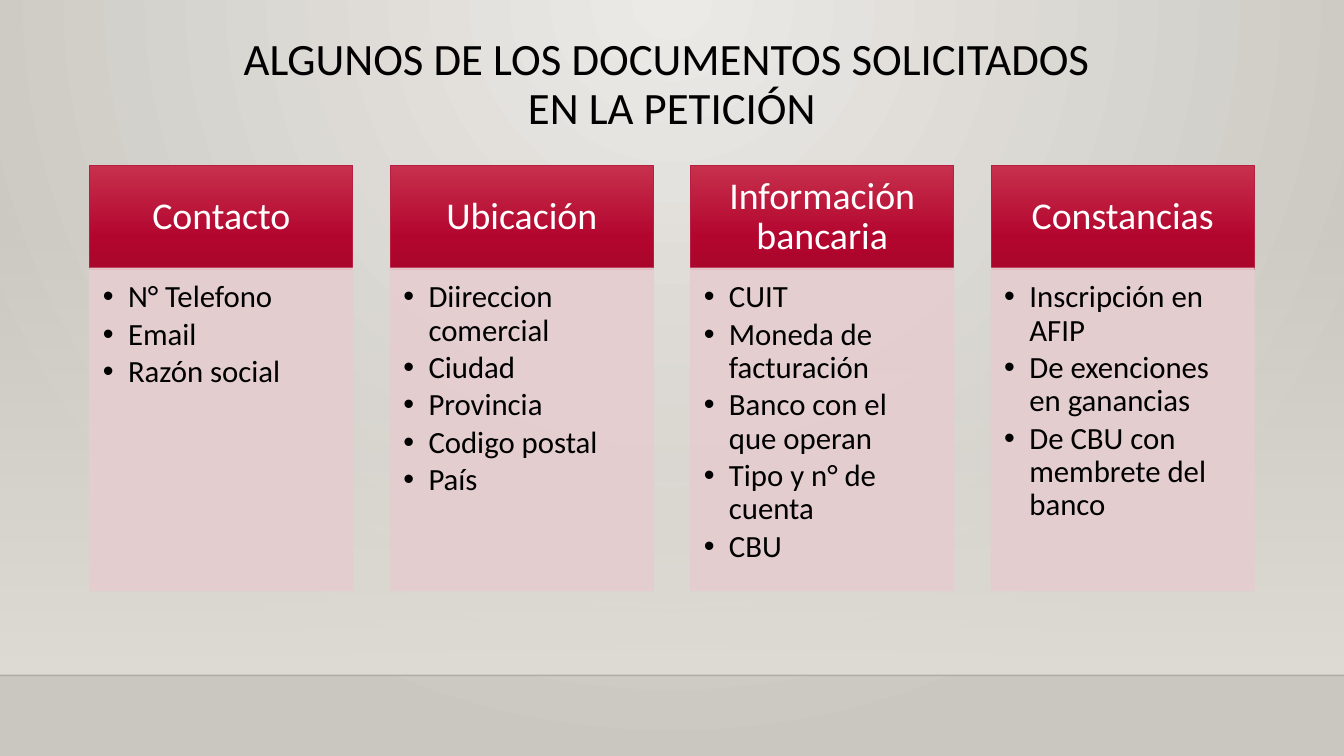
from dataclasses import dataclass

from lxml import etree
from pptx import Presentation
from pptx.dml.color import RGBColor
from pptx.enum.shapes import MSO_CONNECTOR, MSO_SHAPE
from pptx.enum.text import MSO_ANCHOR, PP_ALIGN
from pptx.oxml.ns import qn
from pptx.util import Inches, Pt

RECT = MSO_SHAPE.RECTANGLE
LINE = MSO_CONNECTOR.STRAIGHT
TOP, MIDDLE = MSO_ANCHOR.TOP, MSO_ANCHOR.MIDDLE
LEFT, CENTER = PP_ALIGN.LEFT, PP_ALIGN.CENTER

FONT = "Calibri"
WIDE, HIGH = 13.33, 7.5
COLORS = {
    "light": "ECEAE7", "stone": "CAC7C1", "wall": "DFDBD5", "edge": "000001",
    "rose": "C7304C", "red": "B3062F", "dark": "AA062C", "rim": "B71E42",
    "pink": "E6CDCF", "white": "FFFFFF", "black": "000000",
}


@dataclass
class Card:
    head: str
    items: list[str]


CARDS = [
    Card("Contacto", ["N° Telefono", "Email", "Razón social"]),
    Card("Ubicación", ["Diireccion comercial", "Ciudad", "Provincia",
                       "Codigo postal", "País"]),
    Card("Información bancaria", ["CUIT", "Moneda de facturación",
                                  "Banco con el que operan",
                                  "Tipo y n° de cuenta", "CBU"]),
    Card("Constancias", ["Inscripción en AFIP", "De exenciones en ganancias",
                         "De CBU con membrete del banco"]),
]
CARD_LEFT, CARD_STEP, CARD_WIDE = 0.89, 2.98, 2.61
HEAD_TOP, HEAD_HIGH = 1.64, 1.03
BODY_TOP, BODY_HIGH = 2.66, 3.2


def color(name: str) -> RGBColor:
    return RGBColor.from_string(COLORS[name])


def add(node, tag: str, **attrs):
    """Append a drawing element to a node."""
    return etree.SubElement(node, qn(tag), {k: str(v) for k, v in attrs.items()})


def fade(node, share: int) -> None:
    """Set the opacity, in percent, of the solid colour in a node."""
    add(node.find(f".//{qn('a:srgbClr')}"), "a:alpha", val=share * 1000)


def blend(node, stops: list[tuple[int, str, int]], radial: bool = False) -> None:
    """Turn the first solid fill in a node into a gradient."""
    solid = node.find(f".//{qn('a:solidFill')}")
    grad = etree.Element(qn("a:gradFill"), rotWithShape="1")
    row = add(grad, "a:gsLst")
    for place, name, share in stops:
        stop = add(row, "a:gs", pos=place * 1000)
        tone = add(stop, "a:srgbClr", val=COLORS[name])
        if share < 100:
            add(tone, "a:alpha", val=share * 1000)
    if radial:
        path = add(grad, "a:path", path="circle")
        add(path, "a:fillToRect", l=43000, t=0, r=43000, b=100000)
    else:
        add(grad, "a:lin", ang=5400000, scaled=0)
    solid.getparent().replace(solid, grad)


def box(slide, x: float, y: float, w: float, h: float, fill: str,
        line: str | None = None):
    shape = slide.shapes.add_shape(RECT, Inches(x), Inches(y), Inches(w), Inches(h))
    shape.shadow.inherit = False
    shape.fill.solid()
    shape.fill.fore_color.rgb = color(fill)
    if line:
        shape.line.color.rgb = color(line)
        shape.line.width = Pt(0.75)
    else:
        shape.line.fill.background()
    return shape


def write(shape, lines: list[str], *, size: float, tone: str = "black",
          align=CENTER, anchor=TOP, pads=(0.1, 0.05, 0.1, 0.05),
          after: float = 0, dots: bool = False) -> None:
    frame = shape.text_frame
    frame.word_wrap = True
    frame.vertical_anchor = anchor
    (frame.margin_left, frame.margin_top,
     frame.margin_right, frame.margin_bottom) = map(Inches, pads)
    for i, text in enumerate(lines):
        para = frame.paragraphs[0] if i == 0 else frame.add_paragraph()
        para.alignment = align
        para.line_spacing = 0.9
        para.space_after = Pt(after)
        if dots:
            para.level = 1
            props = para._p.get_or_add_pPr()
            props.set("marL", str(Inches(0.25)))
            props.set("indent", str(Inches(-0.25)))
            add(props, "a:buFont", typeface="Arial")
            add(props, "a:buChar", char="•")
        run = para.add_run()
        run.text = text
        run.font.name = FONT
        run.font.size = Pt(size)
        run.font.color.rgb = color(tone)


def scene(slide) -> None:
    # Backdrop
    slide.background.fill.solid()
    slide.background.fill.fore_color.rgb = color("stone")
    blend(slide.element, [(0, "light", 100), (100, "stone", 100)], radial=True)
    # Wall and floor edge
    wall = box(slide, 0, 2.21, WIDE, 4.49, "wall")
    blend(wall.element.spPr, [(0, "wall", 0), (100, "wall", 100)])
    edge = slide.shapes.add_connector(
        LINE, Inches(0), Inches(6.7), Inches(WIDE), Inches(6.7))
    edge.line.color.rgb = color("edge")
    edge.line.width = Pt(1)
    props = edge.element.spPr
    fade(props, 20)
    add(props, "a:effectLst")


def draw(slide, card: Card, x: float) -> None:
    # Header
    head = box(slide, x, HEAD_TOP, CARD_WIDE, HEAD_HIGH, "red", "rim")
    blend(head.element.spPr,
          [(0, "rose", 100), (69, "red", 100), (100, "dark", 100)])
    write(head, [card.head], size=27, tone="white", anchor=MIDDLE,
          pads=(0.21, 0.12, 0.21, 0.12))
    # Bulleted body
    body = box(slide, x, BODY_TOP, CARD_WIDE, BODY_HIGH, "pink", "pink")
    props = body.element.spPr
    for part in (props.find(qn("a:solidFill")), props.find(qn("a:ln"))):
        fade(part, 90)
    write(body, card.items, size=22, align=LEFT, after=3, dots=True,
          pads=(0.13, 0.13, 0.17, 0.19))


def main() -> None:
    deck = Presentation()
    deck.slide_width, deck.slide_height = Inches(WIDE), Inches(HIGH)
    slide = deck.slides.add_slide(deck.slide_layouts[6])
    scene(slide)
    for i, card in enumerate(CARDS):
        draw(slide, card, CARD_LEFT + i * CARD_STEP)
    # Title
    title = slide.shapes.add_textbox(
        Inches(-0.05), Inches(0.32), Inches(13.43), Inches(1.15))
    write(title, ["ALGUNOS DE LOS DOCUMENTOS SOLICITADOS ", "EN LA PETICIÓN"],
          size=32)
    deck.save("out.pptx")


if __name__ == "__main__":
    main()
